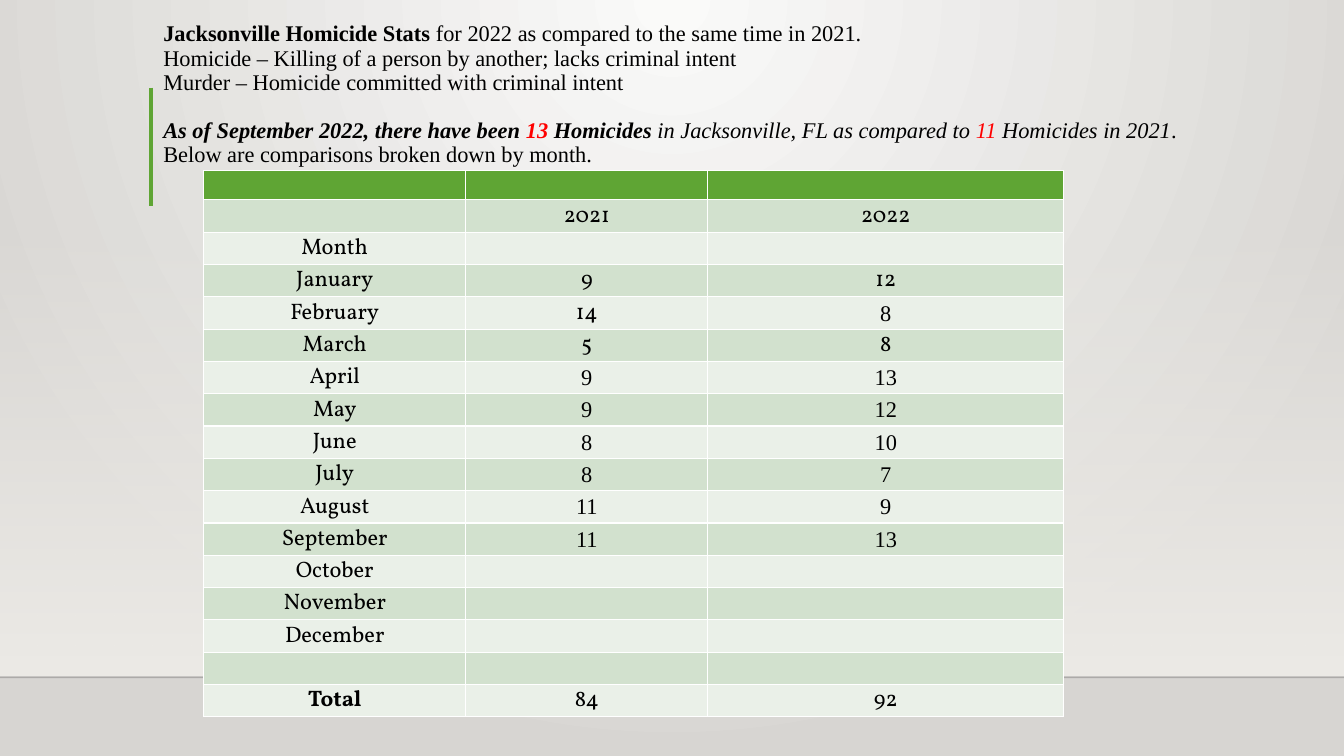
from lxml import etree
from pptx import Presentation
from pptx import util as u
from pptx.dml.color import RGBColor
from pptx.enum import shapes, text
from pptx.oxml.ns import qn

SERIF, BODY = "Times New Roman", "Vollkorn"
GREEN, DARK_BAND, LIGHT_BAND = "5FA534", "D2E1CE", "EAF0E8"


def rgb(value):
    return RGBColor.from_string(value)


def add_xml(parent, tag, **attributes):
    return etree.SubElement(parent, qn(tag), attributes)


def apply(target, values):
    for name, value in values.items():
        setattr(target, name, value)


class HomicideSlide:
    """Holds the slide and its text style, and draws each kind of element."""

    style = {"size": u.Pt(16), "bold": False, "italic": False}

    def __init__(self, deck):
        self.slide = deck.slides.add_slide(deck.slide_layouts[5])

    def gradient(self, fill, colours):
        fill.gradient()
        for stop, colour in zip(fill.gradient_stops, colours):
            stop.color.rgb = rgb(colour)

    def background(self, centre, edge):
        self.gradient(self.slide.background.fill, (centre, edge))
        grad = next(self.slide.element.iter(qn("a:gradFill")))
        grad.remove(grad.find(qn("a:lin")))
        circle = add_xml(grad, "a:path", path="circle")
        add_xml(circle, "a:fillToRect", l="43000", t="0", r="43000", b="100000")

    def wall(self, box, colour):
        wall = self.slide.shapes.add_shape(
            shapes.MSO_SHAPE.RECTANGLE, *map(u.Inches, box))
        wall.shadow.inherit = False
        wall.line.fill.background()
        self.gradient(wall.fill, (colour, colour))
        wall.fill.gradient_angle = 270
        add_xml(next(wall.element.iter(qn("a:srgbClr"))), "a:alpha", val="0")

    def line(self, ends, colour, width, opacity=100):
        line = self.slide.shapes.add_connector(
            shapes.MSO_CONNECTOR.STRAIGHT, *map(u.Inches, ends))
        line.line.color.rgb = rgb(colour)
        line.line.width = u.Pt(width)
        if opacity < 100:
            colour_node = next(line.element.iter(qn("a:srgbClr")))
            add_xml(colour_node, "a:alpha", val=str(opacity * 1000))
        add_xml(line.element.spPr, "a:effectLst")

    def add_words(self, paragraph, words, font=SERIF, colour="000000", **changes):
        run = paragraph.add_run()
        run.text = words
        apply(run.font, {**self.style, "name": font, **changes})
        run.font.color.rgb = rgb(colour)

    def title(self, box, lines):
        title = self.slide.shapes.title
        title.element.getparent().append(title.element)
        apply(title, dict(zip(("left", "top", "width", "height"), map(u.Inches, box))))
        frame = title.text_frame
        apply(frame, {"word_wrap": True, "auto_size": text.MSO_AUTO_SIZE.NONE,
                      "vertical_anchor": text.MSO_ANCHOR.BOTTOM,
                      "margin_bottom": u.Inches(0.32)})
        for index, (gap, runs) in enumerate(lines):
            paragraph = frame.add_paragraph() if index else frame.paragraphs[0]
            apply(paragraph, {"alignment": text.PP_ALIGN.LEFT, "line_spacing": 0.9,
                              "space_before": u.Pt(gap)})
            for words, changes in runs:
                self.add_words(paragraph, words, **changes)

    def table(self, box, widths, rows):
        table = self.slide.shapes.add_table(
            len(rows), len(widths), *map(u.Inches, box)).table
        for column, width in zip(table.columns, widths):
            column.width = u.Inches(width)
        for r, row in enumerate(rows):
            table.rows[r].height = u.Inches(box[3] / len(rows))
            band = DARK_BAND if r % 2 else LIGHT_BAND
            for c, (words, font) in enumerate(row):
                self.cell(table.cell(r, c), words, font, band if r else GREEN,
                          size=u.Pt(16 if r else 12), bold=words == "Total")

    def cell(self, cell, words, font, fill, **changes):
        cell.fill.solid()
        cell.fill.fore_color.rgb = rgb(fill)
        apply(cell, {"vertical_anchor": text.MSO_ANCHOR.MIDDLE, "margin_bottom": 0,
                     **dict.fromkeys(("margin_left", "margin_top", "margin_right"),
                                     u.Inches(0.01))})
        paragraph = cell.text_frame.paragraphs[0]
        paragraph.alignment = text.PP_ALIGN.CENTER
        if words:
            self.add_words(paragraph, words, font, **changes)
        else:
            size = str(int(changes["size"].pt * 100))
            end = add_xml(paragraph._p, "a:endParaRPr", sz=size)
            add_xml(end, "a:latin", typeface=font)


def month_rows():
    counts = [("January", "9", "12"), ("February", "14", "8"), ("March", "5", "8"),
              ("April", "9", "13"), ("May", "9", "12"), ("June", "8", "10"),
              ("July", "8", "7"), ("August", "11", "9"), ("September", "11", "13"),
              ("October", "", ""), ("November", "", ""), ("December", "", "")]
    rows = [("", "", ""), ("", "2021", "2022"), ("Month", "", ""), *counts,
            ("", "", ""), ("Total", "84", "92")]
    serif_months = {"April", "May", "June", "July", "August", "September"}
    for month, before, now in rows:
        before_font = SERIF if month in serif_months else BODY
        now_font = SERIF if month == "February" else before_font
        yield (month, BODY), (before, before_font), (now, now_font)


def main():
    deck = Presentation()
    deck.slide_width, deck.slide_height = u.Inches(13.33), u.Inches(7.5)
    page = HomicideSlide(deck)
    page.background("FAFAF9", "D7D5D2")
    page.wall((0, 2.2, 13.33, 4.5), "EDEBE7")
    page.line((0, 6.72, 13.33, 6.72), "000001", 1, opacity=20)
    page.line((1.5, 0.87, 1.5, 2.04), GREEN, 3)
    strong = {"bold": True, "italic": True}
    slanted = {"italic": True}
    red = {"colour": "FF0000"}
    page.title((1.52, 0.83, 10.5, 1.15), [
        (0, [("Jacksonville Homicide Stats ", {"bold": True}),
             ("for 2022 as compared to the same time in 2021.", {})]),
        (0, [("Homicide – Killing of a person by another; lacks criminal intent", {})]),
        (0, [("Murder – Homicide committed with criminal intent", {})]),
        (17, [("As of September 2022, there have been ", strong),
              ("13 ", {**strong, **red}),
              ("Homicides", strong),
              (" in Jacksonville, FL as compared to ", slanted),
              ("11", {**slanted, **red}),
              (" Homicides in 2021", slanted),
              (". Below are comparisons broken down by month.", {})]),
    ])
    page.table((2.02, 1.69, 8.53, 4.98), (2.6, 2.4, 3.53), list(month_rows()))
    deck.save("out.pptx")


if __name__ == "__main__":
    main()
